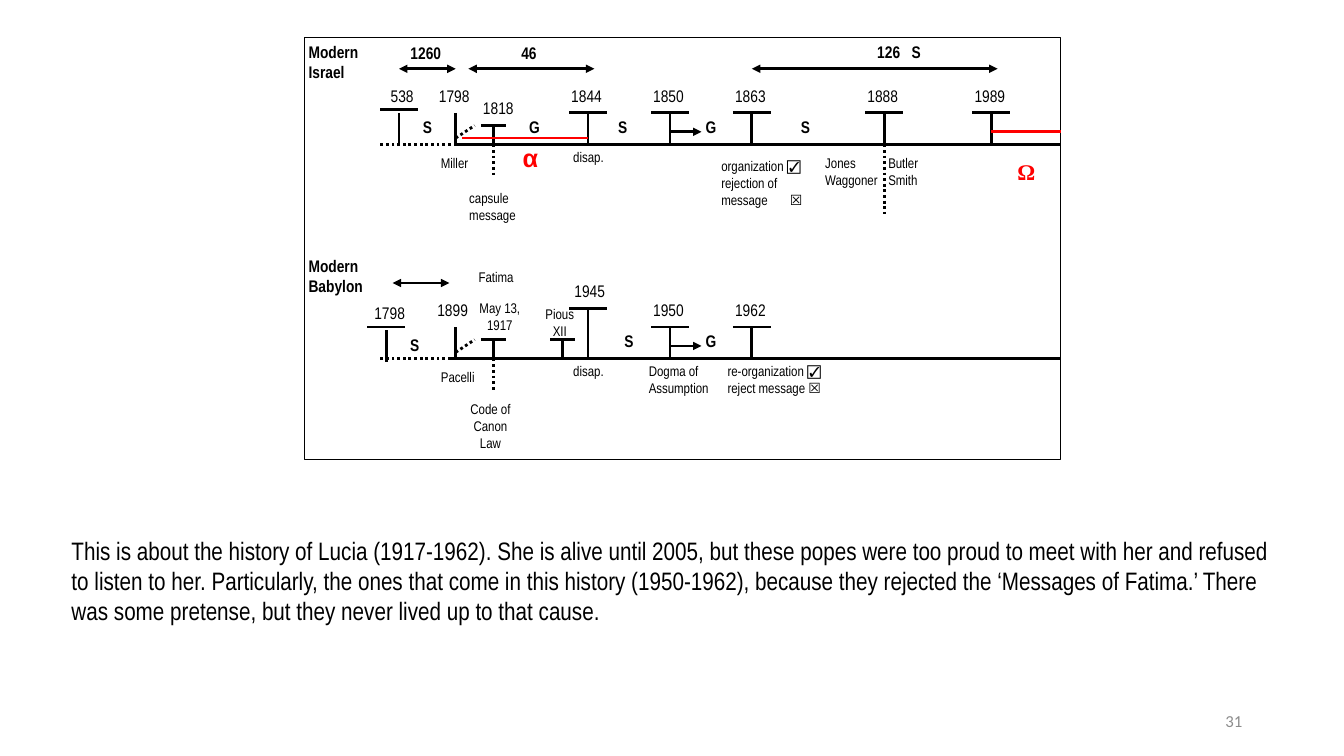
from itertools import groupby
from typing import NamedTuple

from lxml import etree
from pptx import Presentation
from pptx.dml.color import RGBColor
from pptx.enum.dml import MSO_LINE
from pptx.enum.shapes import MSO_CONNECTOR, MSO_SHAPE
from pptx.enum.text import MSO_ANCHOR, PP_ALIGN
from pptx.oxml.ns import qn
from pptx.util import Inches, Pt

LEFT, CENTER, RIGHT = PP_ALIGN.LEFT, PP_ALIGN.CENTER, PP_ALIGN.RIGHT
TOP, MIDDLE = MSO_ANCHOR.TOP, MSO_ANCHOR.MIDDLE
STRAIGHT, RECTANGLE, DOTTED = MSO_CONNECTOR.STRAIGHT, MSO_SHAPE.RECTANGLE, MSO_LINE.ROUND_DOT
WIDTH, HEIGHT = 13.33, 7.5
FRAME_LEFT, FRAME_TOP, CELL = 3.02, 0.37, 0.0625
COLUMNS, ROWS = 120, 67
ISRAEL, BABYLON = 17, 51
BLACK, RED, GRAY = "000000", "FF0000", "8C8C8C"
NARROW, MARK_FONT, MARKS = "Arial Narrow", "Arial", "☑☒"
BODY = (
    "This is about the history of Lucia (1917-1962). She is alive until 2005, but these popes "
    "were too proud to meet with her and refused to listen to her. Particularly, the ones that "
    "come in this history (1950-1962), because they rejected the ‘Messages of Fatima.’ There "
    "was some pretense, but they never lived up to that cause."
)


class Label(NamedTuple):
    """Text in a box of grid columns and rows."""
    text: str
    column: float
    row: float
    columns: float
    rows: float
    size: int = 10
    bold: bool = False
    align: PP_ALIGN = LEFT
    color: str = BLACK
    font: str = NARROW
    tab: float = 0


class Stroke(NamedTuple):
    """A line between two grid points."""
    x1: float
    y1: float
    x2: float
    y2: float
    color: str = BLACK
    dotted: bool = False
    head: bool = False
    tail: bool = False


class Post(NamedTuple):
    """A dated stem with a crossbar standing on a timeline."""
    year: str
    column: float
    top: float
    foot: float
    half_bar: float = 3
    gap: float = 0
    shift: float = -0.25


POSTS = [
    Post("538", 15, 12, ISRAEL, gap=0.5, shift=0.5),
    Post("1798", 24, 12, ISRAEL, half_bar=0),
    Post("1818", 30, 14, ISRAEL, half_bar=2, shift=0.75),
    Post("1844", 45, 12, ISRAEL),
    Post("1850", 58, 12, ISRAEL),
    Post("1863", 71, 12, ISRAEL),
    Post("1888", 92, 12, ISRAEL),
    Post("1989", 109, 12, ISRAEL),
    Post("1798", 13, 46.5, BABYLON + 0.5, gap=0.5, shift=0.5),
    Post("1899", 24, 46, BABYLON, half_bar=0, shift=-0.5),
    Post("", 30, 48, BABYLON, half_bar=2),
    Post("", 41, 48, BABYLON, half_bar=2),
    Post("1945", 45, 43, BABYLON, shift=0.25),
    Post("1950", 58, 46, BABYLON),
    Post("1962", 71, 46, BABYLON),
]
SPANS = [(15, 24, 5), (26, 46, 5), (71, 110, 5), (14, 23, 39)]
LETTERS = [
    ("S", 17, 12), ("G", 34, 12), ("S", 48, 12), ("G", 62, 12), ("S", 77, 12),
    ("S", 15, 46.5), ("S", 49, 46), ("G", 62, 46),
]
LABELS = [
    Label("Modern\nIsrael", 0, 0, 10.25, 7.5, 12, True),
    Label("1260", 16, 0.25, 6.5, 5, 12, True, CENTER),
    Label("46", 33.25, 0.25, 4.75, 5, 12, True, CENTER),
    Label("126\tS", 90.25, 0, 11, 5, 12, True, tab=0.34),
    Label("Miller", 21, 18, 7, 5),
    Label("capsule message", 25.5, 23.5, 9, 8),
    Label("α", 34, 16, 5, 6.5, 18, True, color=RED, font="Arial"),
    Label("disap.", 42, 17, 7, 5),
    Label("organization ☑\nrejection of message\t☒", 65.5, 18.5, 15, 10, tab=0.68),
    Label("Jones\nWaggoner", 82, 18, 10, 10),
    Label("Butler\nSmith", 92, 18, 10, 10),
    Label("Ω", 112.5, 18.5, 5, 6, 16, True, color=RED, font="Times New Roman"),
    Label("Modern\nBabylon", 0, 34, 10.25, 7.5, 12, True),
    Label("Fatima", 27, 36, 8, 4),
    Label("May 13,\n1917", 27, 41, 8, 7, align=CENTER),
    Label("Pious XII", 37, 42, 7, 7, align=CENTER),
    Label("Pacelli", 21, 52, 7, 5),
    Label("Code of Canon Law", 25, 57, 9, 9, align=CENTER),
    Label("disap.", 42, 51, 7, 5),
    Label("Dogma of Assumption", 54, 51, 11, 8),
    Label("re-organization ☑\nreject message ☒", 66.5, 51, 18, 7.5),
]


def rgb(color: str) -> RGBColor:
    """Turn a hex string into a colour."""
    return RGBColor.from_string(color)


def grid_x(column: float) -> int:
    """Place a column across the slide."""
    return Inches(FRAME_LEFT + column * CELL)


def grid_y(row: float) -> int:
    """Place a row down the slide."""
    return Inches(FRAME_TOP + row * CELL)


def format_span(span, size: int, bold: bool, color: str, font: str) -> None:
    """Set the look of one run."""
    span.font.size, span.font.bold, span.font.name = Pt(size), bold, font
    span.font.color.rgb = rgb(color)


def draw_label(page, label: Label) -> None:
    """Draw a label, with check marks in their own font."""
    box = page.shapes.add_textbox(grid_x(label.column), grid_y(label.row),
                                  Inches(label.columns * CELL), Inches(label.rows * CELL))
    frame = box.text_frame
    frame.word_wrap = True
    frame.margin_left = frame.margin_right = frame.margin_top = frame.margin_bottom = Inches(0.04)
    frame.text = "\n".join("" for _ in label.text.split("\n"))
    for para, line in zip(frame.paragraphs, label.text.split("\n")):
        para.alignment = label.align
        for is_mark, letters in groupby(line, key=lambda letter: letter in MARKS):
            span = para.add_run()
            span.text = "".join(letters)
            format_span(span, label.size, label.bold, label.color,
                        MARK_FONT if is_mark else label.font)
        if "\t" in line:
            stops = etree.SubElement(para._p.get_or_add_pPr(), qn("a:tabLst"))
            etree.SubElement(stops, qn("a:tab"), pos=str(Inches(label.tab)), algn="l")


def draw_stroke(page, stroke: Stroke) -> None:
    """Draw a line with its dots and arrowheads."""
    line = page.shapes.add_connector(STRAIGHT, grid_x(stroke.x1), grid_y(stroke.y1),
                                     grid_x(stroke.x2), grid_y(stroke.y2))
    line.line.color.rgb = rgb(stroke.color)
    line.line.width = Pt(2)
    if stroke.dotted:
        line.line.dash_style = DOTTED
    properties = line.element.spPr
    for tag, shown in (("a:headEnd", stroke.head), ("a:tailEnd", stroke.tail)):
        if shown:
            etree.SubElement(properties.find(qn("a:ln")), qn(tag), type="triangle")
    etree.SubElement(properties, qn("a:effectLst"))


def draw_post(page, post: Post) -> None:
    """Draw a stem, its crossbar and its year."""
    draw_stroke(page, Stroke(post.column, post.top, post.column, post.foot))
    if post.half_bar:
        bar = post.top - post.gap
        draw_stroke(page, Stroke(post.column - post.half_bar, bar, post.column + post.half_bar, bar))
    if post.year:
        draw_label(page, Label(post.year, post.column + post.shift - 3.75, post.top - 5,
                               7.5, 4.5, 12, align=CENTER))


def draw_timeline(page, base: float, start: float) -> None:
    """Draw the parts that both timelines share."""
    for stroke in (
        Stroke(start, base, COLUMNS, base),
        Stroke(25, base, 12, base, dotted=True),
        Stroke(24, base - 1, 27, base - 3, dotted=True),
        Stroke(30, base, 30, base + 5, dotted=True),
        Stroke(58, base - 2, 63, base - 2, tail=True),
    ):
        draw_stroke(page, stroke)


def draw_caption(page, text: str, left: float, top: float, width: float, height: float,
                 size: int, color: str, font: str, align: PP_ALIGN, anchor: MSO_ANCHOR) -> None:
    """Draw text placed by percentages of the slide."""
    box = page.shapes.add_textbox(Inches(WIDTH * left / 100), Inches(HEIGHT * top / 100),
                                  Inches(WIDTH * width / 100), Inches(HEIGHT * height / 100))
    frame = box.text_frame
    frame.text, frame.word_wrap, frame.vertical_anchor = text, True, anchor
    para = frame.paragraphs[0]
    para.alignment = align
    format_span(para.runs[0], size, False, color, font)


def main() -> None:
    """Build the slide and save it."""
    deck = Presentation()
    deck.slide_width, deck.slide_height = Inches(WIDTH), Inches(HEIGHT)
    page = deck.slides.add_slide(deck.slide_layouts[6])
    border = page.shapes.add_shape(RECTANGLE, grid_x(0), grid_y(0),
                                   Inches(COLUMNS * CELL), Inches(ROWS * CELL))
    border.shadow.inherit = False
    border.fill.background()
    border.line.color.rgb, border.line.width = rgb(BLACK), Pt(0.25)
    draw_timeline(page, ISRAEL, 24)
    draw_timeline(page, BABYLON, 23)
    for post in POSTS:
        draw_post(page, post)
    for start, end, row in SPANS:
        draw_stroke(page, Stroke(start, row, end, row, head=True, tail=True))
    draw_stroke(page, Stroke(92, ISRAEL, 92, 28, dotted=True))
    draw_stroke(page, Stroke(25, 16, 45, 16, RED))
    draw_stroke(page, Stroke(109, 15, COLUMNS, 15, RED))
    for text, column, row in LETTERS:
        draw_label(page, Label(text, column, row, 5, 5, 12, True, CENTER))
    for label in LABELS:
        draw_label(page, label)
    draw_caption(page, BODY, 4.58, 70.13, 91.07, 13.47, 18, BLACK, NARROW, LEFT, TOP)
    draw_caption(page, "31", 70.67, 92.67, 22.5, 5.33, 12, GRAY, "Calibri", RIGHT, MIDDLE)
    deck.save("out.pptx")


if __name__ == "__main__":
    main()
